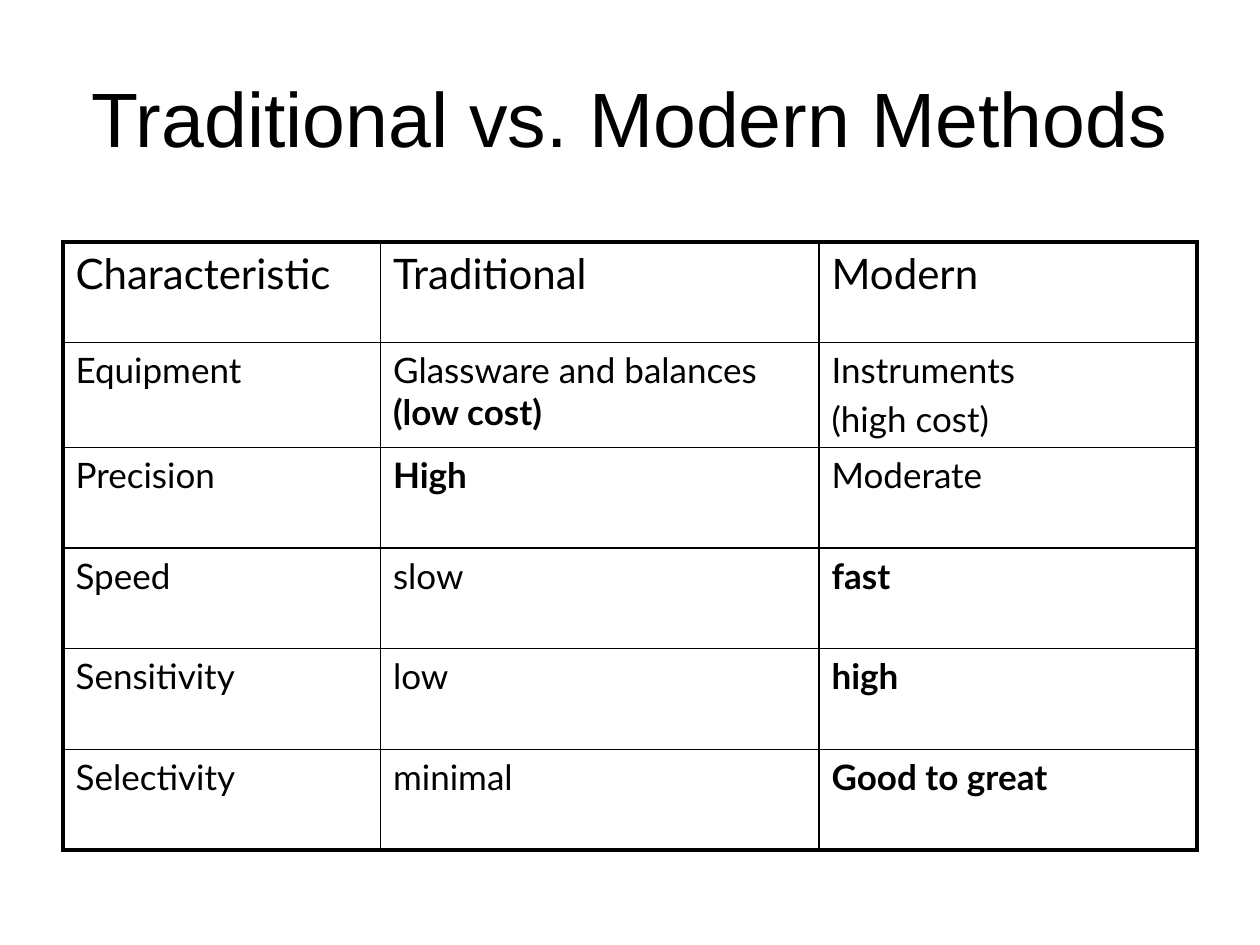
from dataclasses import dataclass

from lxml.etree import SubElement
from pptx import Presentation
from pptx.dml.color import RGBColor
from pptx.enum.text import MSO_ANCHOR, PP_ALIGN
from pptx.oxml.ns import qn
from pptx.util import Cm, Pt


@dataclass(frozen=True)
class Theme:
    ink: str = "000000"
    title_font: str = "Arial"
    table_font: str = "Lato"
    title_size: int = 44
    header_size: int = 24
    body_size: int = 20
    inner_line: float = 1
    outer_line: float = 2.25
    spacing: float = 0.2


THEME = Theme()
COLUMN_WIDTHS = [6.4, 8.84, 7.62]
ROW_HEIGHTS = [2.03, 2.11, 2.03, 2.03, 2.03, 2.03]


def plain(text):
    return [[(text, False)]]


def strong(text):
    return [[(text, True)]]


ROWS = [
    [plain("Characteristic"), plain("Traditional"), plain("Modern")],
    [
        plain("Equipment"),
        [[("Glassware and balances", False), (" (low cost)", True)]],
        plain("Instruments") + plain("(high cost)"),
    ],
    [plain("Precision"), strong("High"), plain("Moderate")],
    [plain("Speed"), plain("slow"), strong("fast")],
    [plain("Sensitivity"), plain("low"), strong("high")],
    [plain("Selectivity"), plain("minimal"), strong("Good to great")],
]


def add_run(p, text, font, size, bold=False):
    r = p.add_run()
    r.text = text
    r.font.name = font
    r.font.size = Pt(size)
    r.font.bold = bold
    r.font.color.rgb = RGBColor.from_string(THEME.ink)


def add_title(s, text):
    sp = s.shapes.add_textbox(Cm(1.27), Cm(0.76), Cm(22.86), Cm(3.18))
    tf = sp.text_frame
    tf.word_wrap = True
    tf.vertical_anchor = MSO_ANCHOR.MIDDLE
    p = tf.paragraphs[0]
    p.alignment = PP_ALIGN.CENTER
    add_run(p, text, THEME.title_font, THEME.title_size)


def set_borders(cell, outer_sides):
    tc_pr = cell._tc.get_or_add_tcPr()
    for side, is_outer in outer_sides.items():
        width = THEME.outer_line if is_outer else THEME.inner_line
        ln = SubElement(tc_pr, qn(f"a:ln{side}"), w=str(int(Pt(width))))
        fill = SubElement(ln, qn("a:solidFill"))
        SubElement(fill, qn("a:srgbClr"), val=THEME.ink)


def fill_cell(cell, paragraphs, size):
    tf = cell.text_frame
    for i, runs in enumerate(paragraphs):
        p = tf.add_paragraph() if i else tf.paragraphs[0]
        p.space_before = Pt(size * THEME.spacing)
        for text, bold in runs:
            add_run(p, text, THEME.table_font, size, bold)


def add_comparison_table(s, rows):
    last_row, last_col = len(rows) - 1, len(COLUMN_WIDTHS) - 1
    table = s.shapes.add_table(
        len(rows), len(COLUMN_WIDTHS), Cm(1.27), Cm(4.88),
        Cm(sum(COLUMN_WIDTHS)), Cm(sum(ROW_HEIGHTS)),
    ).table
    table.first_row = False
    table.horz_banding = False
    for column, width in zip(table.columns, COLUMN_WIDTHS):
        column.width = Cm(width)
    for row, height in zip(table.rows, ROW_HEIGHTS):
        row.height = Cm(height)
    for i, row in enumerate(rows):
        size = THEME.body_size if i else THEME.header_size
        for j, paragraphs in enumerate(row):
            cell = table.cell(i, j)
            fill_cell(cell, paragraphs, size)
            set_borders(cell, {
                "L": j == 0, "R": j == last_col,
                "T": i == 0, "B": i == last_row,
            })
            cell.fill.background()


def main():
    prs = Presentation()
    prs.slide_width, prs.slide_height = Cm(25.4), Cm(19.05)
    s = prs.slides.add_slide(prs.slide_layouts[6])
    add_title(s, "Traditional vs. Modern Methods")
    add_comparison_table(s, ROWS)
    prs.save("out.pptx")


if __name__ == "__main__":
    main()
